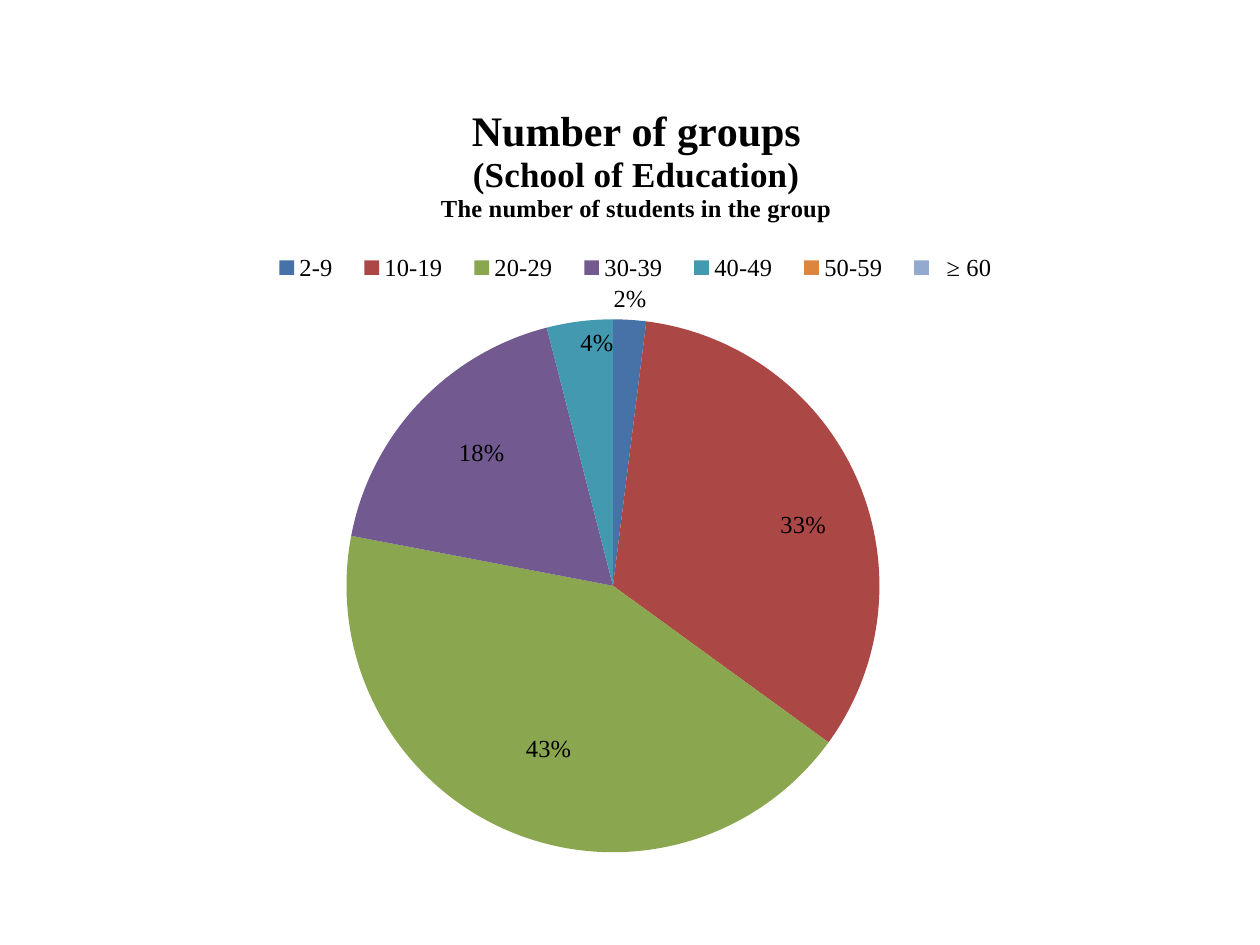
from pptx import Presentation
from pptx.chart.data import CategoryChartData
from pptx.dml.color import RGBColor
from pptx.enum.chart import XL_CHART_TYPE, XL_LABEL_POSITION, XL_LEGEND_POSITION
from pptx.oxml import parse_xml
from pptx.oxml.ns import nsdecls
from pptx.util import Inches, Pt

FACE = "Times New Roman"
TITLE = [
    ("Number of groups", 24),
    ("(School of Education)", 20),
    ("The number of students in the group", 14),
]
GROUPS = [
    ("2-9", 2, "4672A8"),
    ("10-19", 33, "AB4744"),
    ("20-29", 43, "8AA64F"),
    ("30-39", 18, "725990"),
    ("40-49", 4, "4299B0"),
    ("50-59", None, "DC853E"),
    ("  ≥ 60", None, "93A9CF"),
]
SPOTS = [
    (0, XL_LABEL_POSITION.OUTSIDE_END, None),
    (1, XL_LABEL_POSITION.CENTER, {"x": 0.06, "y": -0.01}),
    (2, XL_LABEL_POSITION.CENTER, {"x": -0.01, "y": 0.05}),
    (3, XL_LABEL_POSITION.CENTER, {"x": -0.03, "y": -0.05}),
    (4, XL_LABEL_POSITION.INSIDE_END, None),
]
PLOT = {"x": 0.25, "y": 0.3, "w": 0.47, "h": 0.65}
LEGEND = {"x": 0.17, "y": 0.22, "w": 0.67, "h": 0.04}
HEAD = {"x": 0.33, "y": 0.04}


def style(font, size, bold=False, color="000000"):
    """Format a font."""
    font.name, font.size, font.bold = FACE, Pt(size), bold
    font.color.rgb = RGBColor.from_string(color)


def write(frame, lines, **form):
    """Write sized lines as paragraphs."""
    for i, (text, size) in enumerate(lines):
        para = frame.paragraphs[0] if i == 0 else frame.add_paragraph()
        run = para.add_run()
        run.text = text
        style(run.font, size, **form)


def place(node, index, box, edge=True, inner=False):
    """Give a chart part a manual layout."""
    for old in node.xpath("c:layout"):
        node.remove(old)
    tags = '<c:layoutTarget val="inner"/>' if inner else ""
    if edge:
        tags += '<c:xMode val="edge"/><c:yMode val="edge"/>'
    tags += "".join(f'<c:{key} val="{val}"/>' for key, val in box.items())
    node.insert(index, parse_xml(
        f'<c:layout {nsdecls("c")}><c:manualLayout>{tags}'
        "</c:manualLayout></c:layout>"))


def label(plot):
    """Show percentages at their spots."""
    labels = plot.series[0].data_labels
    labels.show_percentage, labels.show_value = True, False
    labels.number_format, labels.number_format_is_linked = "0%", False
    style(labels.font, 14)
    for i, spot, shift in SPOTS:
        tag = plot.series[0].points[i].data_label
        style(tag.font, 14)
        tag.position = spot
        node = labels._element.xpath(f"c:dLbl[c:idx/@val='{i}']")[0]
        node.xpath("c:showVal")[0].set("val", "0")
        node.xpath("c:showPercent")[0].set("val", "1")
        if shift:
            place(node, 1, shift, edge=False)


def build():
    """Build the slide."""
    deck = Presentation()
    deck.slide_width, deck.slide_height = Inches(10), Inches(7.5)
    slide = deck.slides.add_slide(deck.slide_layouts[6])
    names, counts, colors = zip(*GROUPS)
    data = CategoryChartData()
    data.categories = names
    data.add_series("Series 1", counts)
    chart = slide.shapes.add_chart(
        XL_CHART_TYPE.PIE, Inches(0.5), Inches(0.55),
        Inches(9), Inches(6.56), data).chart
    style(chart.font, 10)
    chart.font.name = "Calibri"

    chart.has_title = True
    write(chart.chart_title.text_frame, TITLE, bold=True)
    chart.chart_title.include_in_layout = False
    chart.has_legend = True
    chart.legend.position = XL_LEGEND_POSITION.TOP
    chart.legend.include_in_layout = False
    style(chart.legend.font, 14)

    plot = chart.plots[0]
    plot.vary_by_categories = True
    for i, color in enumerate(colors):
        fill = plot.series[0].points[i].format.fill
        fill.solid()
        fill.fore_color.rgb = RGBColor.from_string(color)
    label(plot)

    root = chart.element
    place(root.xpath("c:chart/c:title")[0], 1, HEAD)
    place(root.xpath("c:chart/c:legend")[0], 1, LEGEND)
    place(root.xpath("c:chart/c:plotArea")[0], 0, PLOT, inner=True)
    deck.save("out.pptx")


if __name__ == "__main__":
    build()
